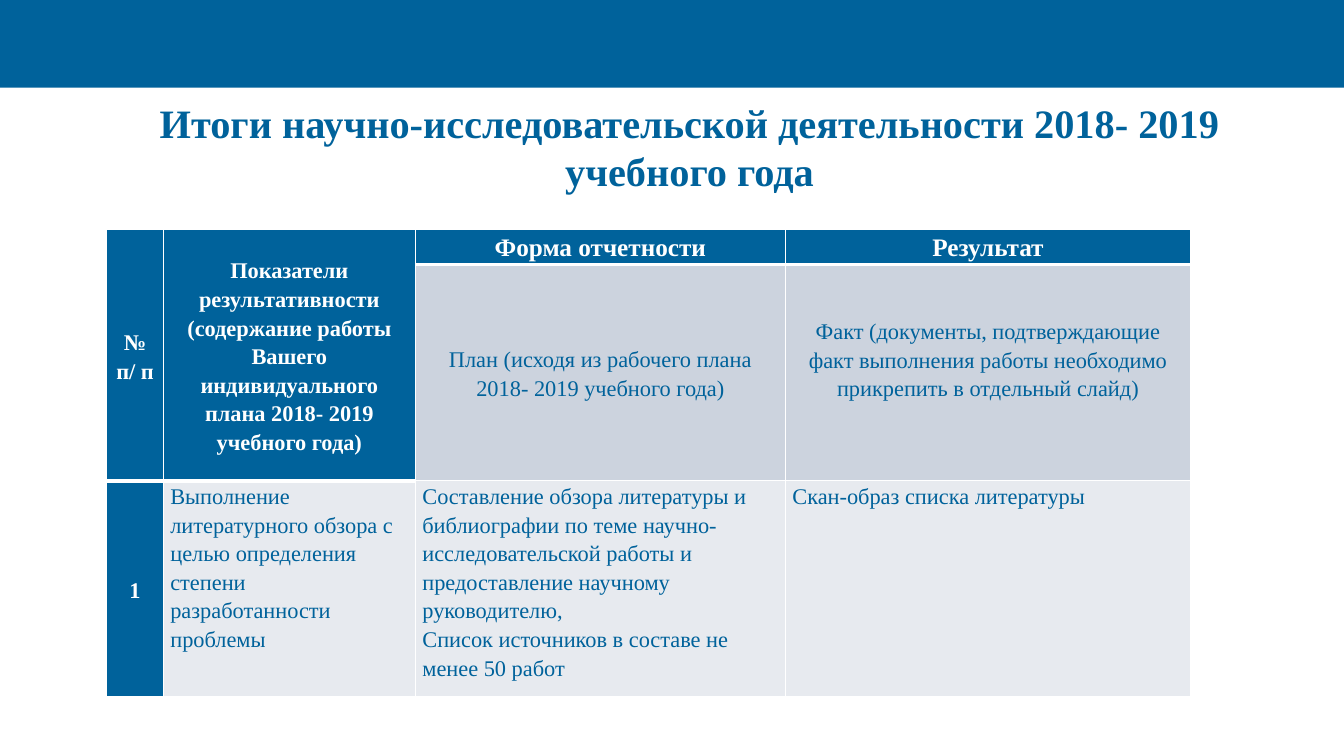
from lxml import etree
from pptx import Presentation
from pptx.dml.color import RGBColor
from pptx.enum import shapes, text
from pptx.oxml.ns import qn
from pptx.util import Inches, Pt

BLUE = RGBColor(0x00, 0x62, 0x9B)
WHITE = RGBColor(0xFF, 0xFF, 0xFF)
PLAN_GREY = RGBColor(0xCC, 0xD3, 0xDE)
WORK_GREY = RGBColor(0xE7, 0xEA, 0xEF)
CENTER, LEFT = text.PP_ALIGN.CENTER, text.PP_ALIGN.LEFT
MIDDLE, TOP = text.MSO_ANCHOR.MIDDLE, text.MSO_ANCHOR.TOP


def write(frame, lines, align, spacing, **font_values):
    """Put one paragraph per line into the frame, all in the same format."""
    frame.word_wrap = True
    for i, line in enumerate(lines):
        paragraph = frame.paragraphs[0] if i == 0 else frame.add_paragraph()
        paragraph.alignment = align
        paragraph.line_spacing = spacing
        run = paragraph.add_run()
        run.text = line
        run.font.name = "Times New Roman"
        color = font_values["color"]
        run.font.color.rgb = color
        run.font.size = Pt(font_values["size"])
        run.font.bold = font_values["bold"]


def set_borders(cell, bottom_width):
    properties = cell._tc.get_or_add_tcPr()
    widths = {"a:lnL": 1, "a:lnR": 1, "a:lnT": 1, "a:lnB": bottom_width}
    for i, (side, width) in enumerate(widths.items()):
        line = etree.Element(qn(side), w=str(Pt(width)))
        fill = etree.SubElement(line, qn("a:solidFill"))
        etree.SubElement(fill, qn("a:srgbClr"), val=str(WHITE))
        properties.insert(i, line)


prs = Presentation()
prs.slide_width, prs.slide_height = Inches(13.33), Inches(7.5)
slide = prs.slides.add_slide(prs.slide_layouts[6])

band = slide.shapes.add_shape(shapes.MSO_SHAPE.RECTANGLE, 0, 0, prs.slide_width, Inches(0.87))
band.shadow.inherit = False
band.fill.solid()
band.fill.fore_color.rgb = BLUE
band.line.fill.background()

title = slide.shapes.add_textbox(Inches(0.84), Inches(1), Inches(12), Inches(0.9))
title.text_frame.vertical_anchor = MIDDLE
write(title.text_frame, ["Итоги научно-исследовательской деятельности 2018- 2019 учебного года"],
      CENTER, 1.0, size=28.8, bold=True, color=BLUE)

column_widths = [0.56, 2.5, 3.67, 4.02]
row_heights = [0.33, 1.98, 1.98]
results = slide.shapes.add_table(3, 4, Inches(1.06), Inches(2.28),
                                 Inches(sum(column_widths)), Inches(sum(row_heights))).table
for column, width in zip(results.columns, column_widths):
    column.width = Inches(width)
for row, height in zip(results.rows, row_heights):
    row.height = Inches(height)

# Cell styles: fill, anchor, alignment, font values
number = (BLUE, MIDDLE, CENTER, {"size": 16, "bold": True, "color": WHITE})
heading = (BLUE, TOP, CENTER, {"size": 18, "bold": True, "color": WHITE})
plan = (PLAN_GREY, MIDDLE, CENTER, {"size": 16, "bold": False, "color": BLUE})
work = (WORK_GREY, TOP, LEFT, {"size": 16, "bold": False, "color": BLUE})

contents = {
    (0, 0): (number, ["№ п/ п"]),
    (0, 1): (number, ["Показатели результативности",
                      "(содержание работы Вашего индивидуального плана 2018- 2019 учебного года)"]),
    (0, 2): (heading, ["Форма отчетности"]),
    (0, 3): (heading, ["Результат"]),
    (1, 2): (plan, ["План (исходя из рабочего плана 2018- 2019 учебного года)"]),
    (1, 3): (plan, ["Факт (документы, подтверждающие факт выполнения работы "
                    "необходимо прикрепить в отдельный слайд)"]),
    (2, 0): (number, ["1"]),
    (2, 1): (work, ["Выполнение литературного обзора с целью определения степени "
                    "разработанности проблемы"]),
    (2, 2): (work, ["Составление обзора литературы и библиографии по теме "
                    "научно-исследовательской работы и предоставление научному руководителю,",
                    "Список источников в составе не менее 50 работ"]),
    (2, 3): (work, ["Скан-образ списка литературы"]),
}
for (row, column), ((fill, anchor, align, font_values), lines) in contents.items():
    cell = results.cell(row, column)
    cell.fill.solid()
    cell.fill.fore_color.rgb = fill
    cell.vertical_anchor = anchor
    cell.margin_left = cell.margin_right = Inches(0.07)
    cell.margin_top = cell.margin_bottom = 0
    write(cell.text_frame, lines, align, 1.15, **font_values)

for row in range(3):
    for column in range(4):
        under_heading = row == 0 or (row == 1 and column < 2)
        set_borders(results.cell(row, column), 3 if under_heading else 1)
for column in range(2):
    results.cell(0, column).merge(results.cell(1, column))
results.cell(1, 3).margin_bottom = Inches(0.28)

prs.save("out.pptx")
